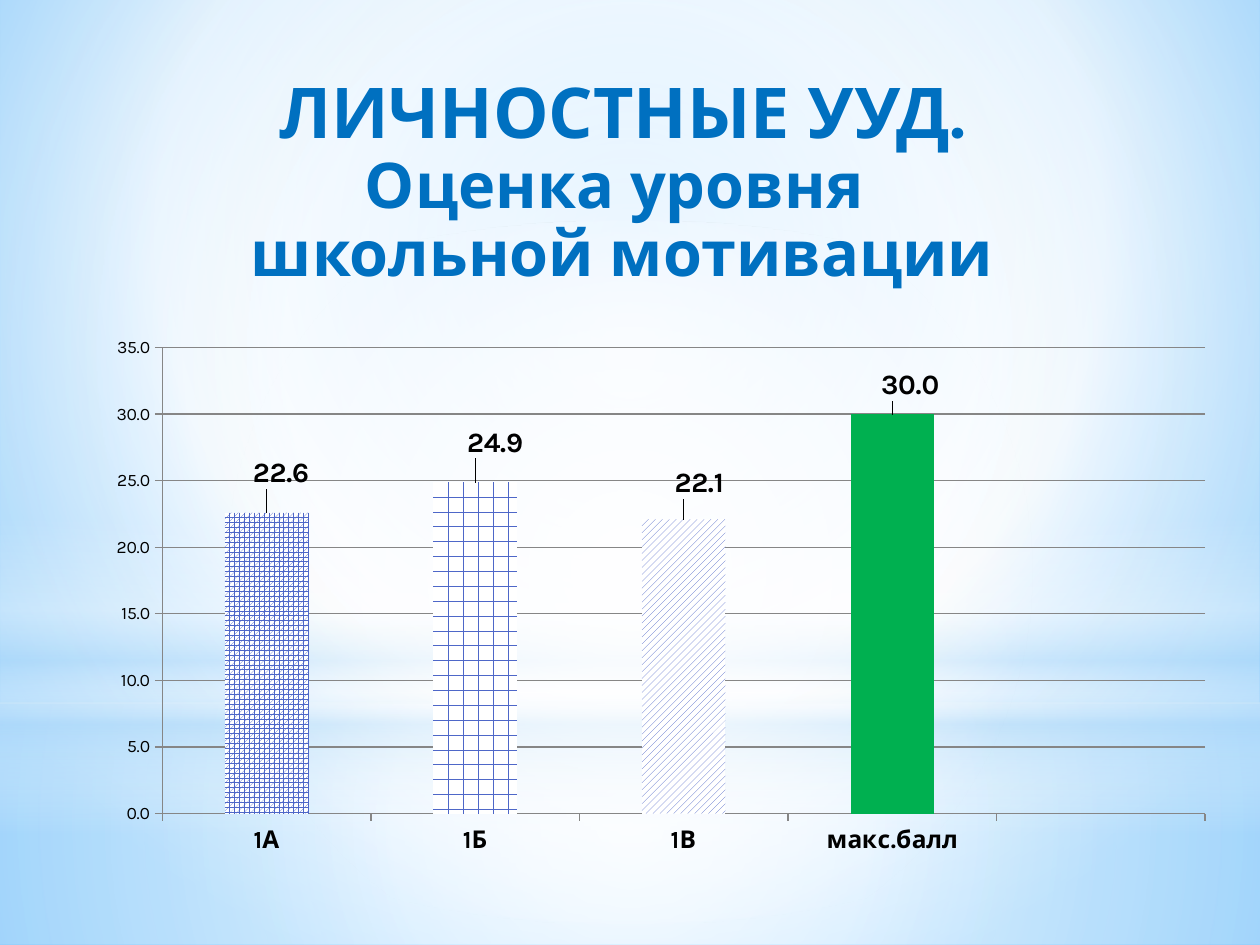
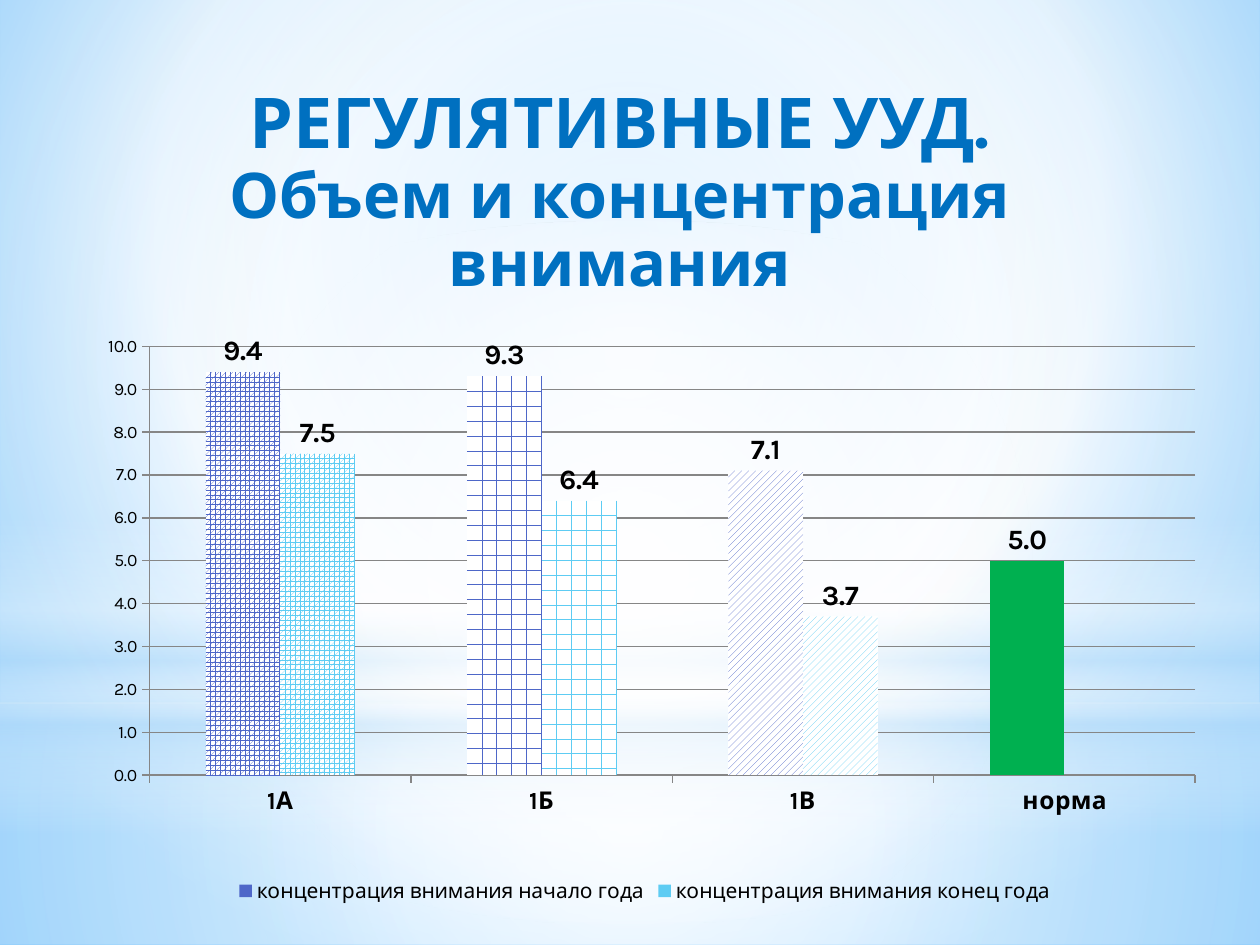
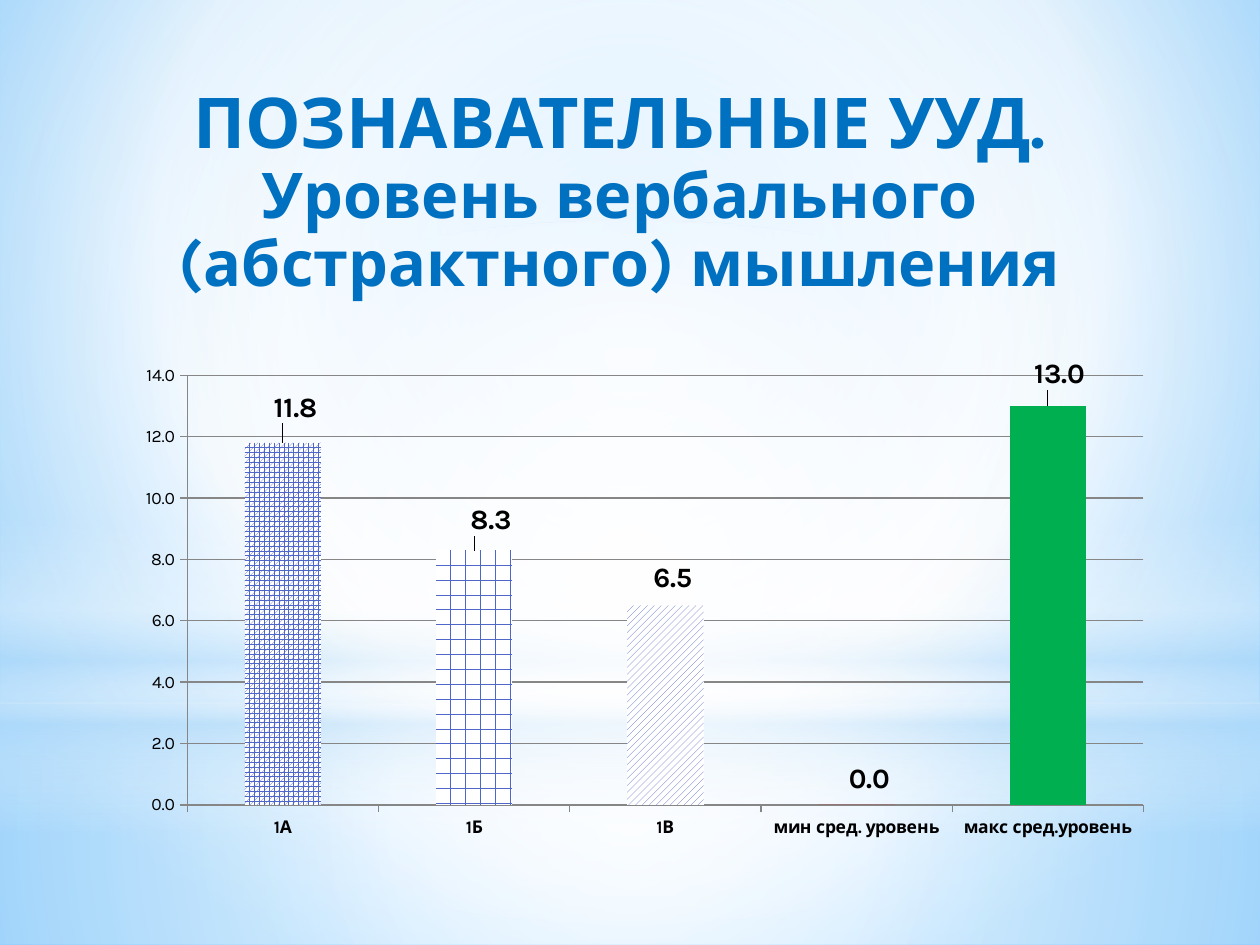
from copy import deepcopy

from lxml.etree import SubElement
from pptx import Presentation
from pptx.chart.data import CategoryChartData
from pptx.dml.color import RGBColor
from pptx.enum.chart import (XL_CHART_TYPE, XL_LABEL_POSITION,
                             XL_LEGEND_POSITION, XL_TICK_MARK)
from pptx.enum.dml import MSO_PATTERN
from pptx.enum.shapes import MSO_SHAPE
from pptx.enum.text import MSO_ANCHOR, MSO_AUTO_SIZE, PP_ALIGN
from pptx.oxml import parse_xml
from pptx.oxml.ns import nsdecls, qn
from pptx.util import Inches, Pt

FONT = "Karla"
BLUE, INK, GRID = "0070C0", "000000", "868686"
START, FINISH, NORM, LOW = "4E67C8", "5ECCF3", "00B050", "FF0000"
WHITE, SKY = "FFFFFF", "B4DCFA"
CLASSES = ["1А", "1Б", "1В"]
WEAVES = [MSO_PATTERN.SPHERE, MSO_PATTERN.HORIZONTAL_BRICK,
          MSO_PATTERN.WIDE_UPWARD_DIAGONAL]
CENTER = (50, 50, 50, 50)

# Backdrop layers: shape, box, gradient stops (position, colour, alpha), focus
LAYERS = [
    (MSO_SHAPE.RECTANGLE, (0, 5.58, 10, 1.92),
     [(0, WHITE, 91), (37, WHITE, 76), (100, SKY, 79)], CENTER),
    (MSO_SHAPE.RECTANGLE, (0, 0, 10, 5.58),
     [(0, WHITE, 89), (48, WHITE, 62), (100, SKY, 79)], CENTER),
    (MSO_SHAPE.RECTANGLE, (0, 4.12, 10, 2.5),
     [(0, WHITE, 0), (29, WHITE, 30), (45, SKY, 40), (55, WHITE, 26),
      (65, SKY, 60), (100, WHITE, 0)], None),
    (MSO_SHAPE.OVAL, (0, 1.75, 10, 5.58),
     [(0, WHITE, 100), (56, WHITE, 0)], CENTER),
]


def color(code):
    return RGBColor.from_string(code)


def style(font, size, bold=None, code=INK):
    font.name, font.size, font.bold = FONT, Pt(size), bold
    font.color.rgb = color(code)


def blend(fill, root, stops, focus):
    """Swap the first fill under root for a gradient; no focus means vertical."""
    fill.solid()
    plain = root.xpath(".//a:solidFill")[0]
    grad = parse_xml(f'<a:gradFill {nsdecls("a")} rotWithShape="1"/>')
    marks = SubElement(grad, qn("a:gsLst"))
    for pos, code, alpha in stops:
        mark = SubElement(marks, qn("a:gs"), pos=str(pos * 1000))
        tint = SubElement(mark, qn("a:srgbClr"), val=code)
        if alpha < 100:
            SubElement(tint, qn("a:alpha"), val=str(alpha * 1000))
    if focus:
        way = SubElement(grad, qn("a:path"), {"path": "circle"})
        sides = {side: str(part * 1000) for side, part in zip("ltrb", focus)}
        SubElement(way, qn("a:fillToRect"), sides)
    else:
        SubElement(grad, qn("a:lin"), ang="5400000", scaled="0")
    plain.getparent().replace(plain, grad)


def add_backdrop(master, slide):
    """Draw the shared layers on a slide, then hand them to the master."""
    blend(master.background.fill, master.element,
          [(0, "9ED5FF", 100), (60, WHITE, 100), (100, "5BB9FF", 100)],
          (20, 10, 20, 60))
    for num, (kind, box, stops, focus) in enumerate(LAYERS):
        layer = slide.shapes.add_shape(kind, *map(Inches, box))
        layer.shadow.inherit = False
        layer.line.fill.background()
        blend(layer.fill, layer.element, stops, focus)
        layer.element.nvSpPr.cNvPr.set("id", str(20 + num))
        master.shapes.element.insert(2 + num, layer.element)


def add_title(slide, box, head, text):
    title = slide.shapes.title
    title.left, title.top, title.width, title.height = map(Inches, box)
    frame = title.text_frame
    frame.text = f"{head}\v{text}"
    frame.word_wrap = True
    frame.auto_size = MSO_AUTO_SIZE.NONE
    frame.vertical_anchor = MSO_ANCHOR.TOP
    frame.margin_top = Inches(0.1)
    para = frame.paragraphs[0]
    para.alignment, para.line_spacing = PP_ALIGN.CENTER, 0.9
    for num, run in enumerate(para.runs):
        style(run.font, 36 if num else 40, True, BLUE)
    # Line breaks take the size of the run before them
    for stop in frame._txBody.iter(qn("a:br")):
        stop.append(deepcopy(stop.getprevious().find(qn("a:rPr"))))


def layout(inner="", **parts):
    tags = "".join(f'<c:{key} val="{val}"/>' for key, val in parts.items())
    return parse_xml(f'<c:layout {nsdecls("c")}><c:manualLayout>{inner}{tags}'
                     '</c:manualLayout></c:layout>')


def set_plot(chart, plot):
    area = chart.element.xpath("c:chart/c:plotArea")[0]
    for old in area.findall(qn("c:layout")):
        area.remove(old)
    x, y, w, h = plot
    area.insert(0, layout('<c:layoutTarget val="inner"/><c:xMode val="edge"/>'
                          '<c:yMode val="edge"/>', x=x, y=y, w=w, h=h))


def set_axes(chart, top, step, size):
    cat, val = chart.category_axis, chart.value_axis
    style(cat.tick_labels.font, size, True)
    style(val.tick_labels.font, 10)
    val.tick_labels.number_format = "0.0"
    val.tick_labels.number_format_is_linked = False
    val.minimum_scale, val.maximum_scale, val.major_unit = 0, top, step
    val.has_major_gridlines = True
    for axis in (cat, val):
        axis.major_tick_mark = XL_TICK_MARK.OUTSIDE
        axis.minor_tick_mark = XL_TICK_MARK.NONE
        axis.format.line.color.rgb = color(GRID)
    val.major_gridlines.format.line.color.rgb = color(GRID)


def paint_bars(row, code, extra):
    """Weave the class bars and fill the reference bars after them."""
    row.format.fill.solid()
    row.format.fill.fore_color.rgb = color(code)
    for num, weave in enumerate(WEAVES):
        fill = row.points[num].format.fill
        fill.patterned()
        fill.pattern = weave
        fill.fore_color.rgb, fill.back_color.rgb = color(code), color(WHITE)
    for num, tone in enumerate(extra, len(WEAVES)):
        fill = row.points[num].format.fill
        fill.solid()
        fill.fore_color.rgb = color(tone)


def label_bars(row):
    tags = row.data_labels
    tags.show_value = True
    tags.number_format, tags.number_format_is_linked = "0.0", False
    tags.position = XL_LABEL_POSITION.OUTSIDE_END
    style(tags.font, 16, True)


def shift_labels(chart, row, shifts):
    """Move single labels off their bars."""
    for num, (x, y) in enumerate(shifts):
        tag = row.points[num].data_label
        style(tag.font, 16, True)
        tag.position = XL_LABEL_POSITION.OUTSIDE_END
        node = chart.element.xpath(f".//c:dLbl[c:idx/@val='{num}']")[0]
        node.insert(1, layout(x=x, y=y))


def add_bars(slide, box, plot, cats, rows, extra, top, step, size=14,
             shifts=()):
    data = CategoryChartData(number_format="0.0")
    data.categories = CLASSES + cats
    for name, vals in rows:
        data.add_series(name, vals)
    chart = slide.shapes.add_chart(XL_CHART_TYPE.COLUMN_CLUSTERED,
                                   *map(Inches, box), data).chart
    style(chart.font, 10)
    chart.has_title = False
    chart.has_legend = len(rows) > 1
    if chart.has_legend:
        chart.legend.position = XL_LEGEND_POSITION.BOTTOM
        chart.legend.include_in_layout = False
        style(chart.legend.font, 12)
    set_plot(chart, plot)
    set_axes(chart, top, step, size)
    bars = chart.plots[0]
    bars.gap_width, bars.overlap, bars.vary_by_categories = 150, 0, False
    for num, row in enumerate(bars.series):
        paint_bars(row, (START, FINISH)[num], () if num else extra)
        label_bars(row)
    shift_labels(chart, bars.series[0], shifts)


def main():
    deck = Presentation()
    deck.slide_width, deck.slide_height = Inches(10), Inches(7.5)
    first, second, third = [deck.slides.add_slide(deck.slide_layouts[5])
                            for _ in range(3)]
    add_backdrop(deck.slide_master, first)

    # Motivation
    add_title(first, (1.38, 0.52, 7.12, 1.25), "ЛИЧНОСТНЫЕ УУД.",
              "Оценка уровня \vшкольной мотивации")
    add_bars(first, (0.75, 2.1, 8.82, 4.88), (0.061, 0.135, 0.939, 0.758),
             ["макс.балл", ""],
             [("Series 1", (22.6, 24.9, 22.1, 30, None))], [NORM], 35, 5,
             shifts=[(0.013, -0.03), (0.018, -0.03), (0.014, -0.025),
                     (0.016, -0.013)])

    # Attention
    wide = (1.06, 0.6, 7.72, 1.25)
    add_title(second, wide, "РЕГУЛЯТИВНЫЕ УУД.",
              "Объем и концентрация внимания")
    add_bars(second, (0.75, 2.49, 8.74, 4.72), (0.05, 0.055, 0.95, 0.721),
             ["норма"],
             [("концентрация внимания начало года", (9.4, 9.3, 7.1, 5)),
              ("концентрация внимания конец года", (7.5, 6.4, 3.7, None))],
             [NORM], 10, 1)

    # Verbal thinking
    add_title(third, wide, "ПОЗНАВАТЕЛЬНЫЕ УУД.",
              "Уровень вербального (абстрактного) мышления")
    add_bars(third, (0.91, 2.64, 8.35, 4.18), (0.069, 0.081, 0.909, 0.816),
             ["мин сред. уровень", "макс сред.уровень"],
             [("Series 1", (11.8, 8.3, 6.5, 0, 13))], [LOW, NORM], 14, 2, 10,
             shifts=[(0.012, -0.027), (0.016, -0.017), (0.007, -0.013),
                     (0.012, -0.01), (0.011, -0.02)])

    deck.save("out.pptx")


if __name__ == "__main__":
    main()
